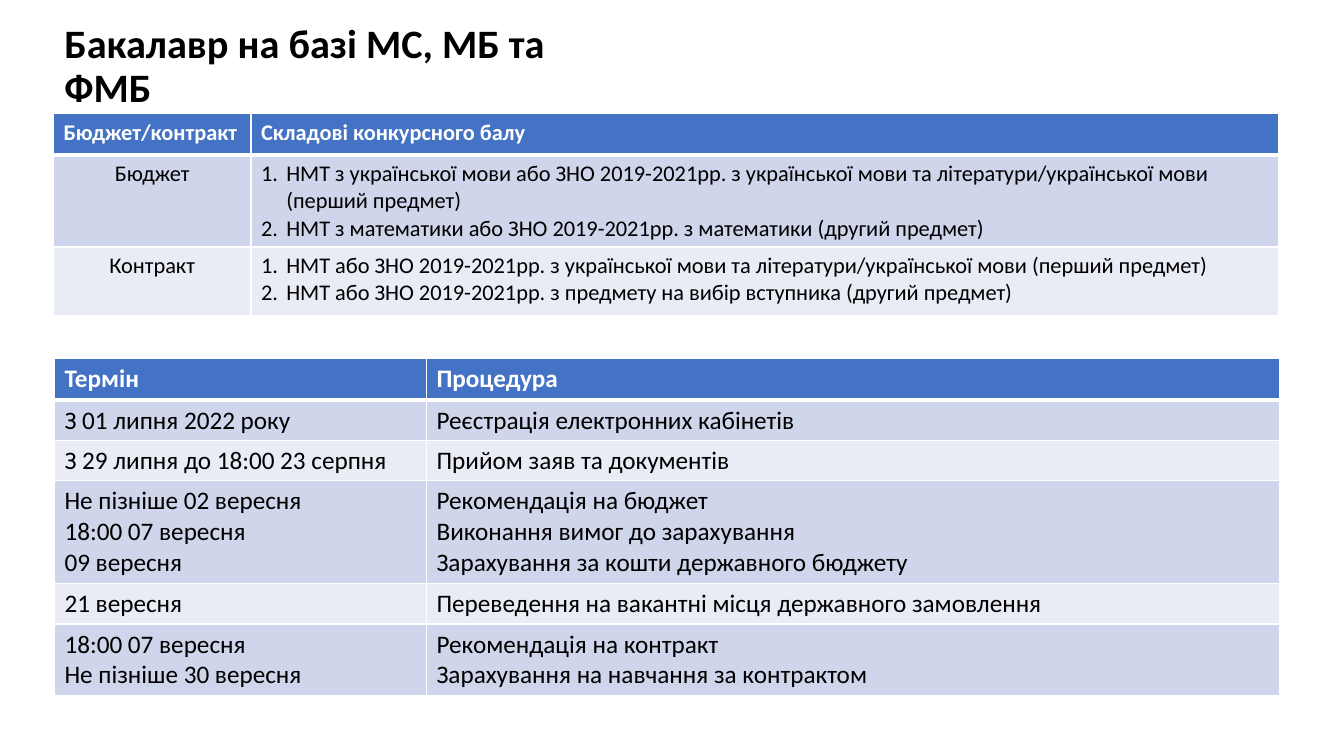
from lxml import etree
from pptx import Presentation
from pptx.dml.color import RGBColor
from pptx.enum.text import MSO_ANCHOR, PP_ALIGN
from pptx.oxml.ns import qn
from pptx.util import Inches, Pt

CENTER = PP_ALIGN.CENTER
LEFT = PP_ALIGN.LEFT
MIDDLE = MSO_ANCHOR.MIDDLE

FONT = "Calibri"
BLACK = RGBColor(0x00, 0x00, 0x00)
WHITE = RGBColor(0xFF, 0xFF, 0xFF)
HEADER_BLUE = RGBColor(0x44, 0x72, 0xC4)
BAND_DARK = RGBColor(0xCF, 0xD5, 0xEA)
BAND_LIGHT = RGBColor(0xE9, 0xEB, 0xF5)

TITLE = "Бакалавр на базі МС, МБ та ФМБ"

# Each cell is a list of paragraphs.
SCORE_ROWS = [
    (["Бюджет/контракт"], ["Складові конкурсного балу"]),
    (["Бюджет"],
     ["НМТ з української мови або ЗНО 2019-2021рр. з української мови та "
      "літератури/української мови (перший предмет)",
      "НМТ з математики або ЗНО 2019-2021рр. з математики (другий предмет)"]),
    (["Контракт"],
     ["НМТ або ЗНО 2019-2021рр. з української мови та "
      "літератури/української мови (перший предмет)",
      "НМТ або ЗНО 2019-2021рр. з предмету на вибір вступника (другий предмет)"]),
]

SCHEDULE_ROWS = [
    (["Термін"], ["Процедура"]),
    (["З 01 липня 2022 року"], ["Реєстрація електронних кабінетів"]),
    (["З 29 липня до 18:00 23 серпня"], ["Прийом заяв та документів"]),
    (["Не пізніше 02 вересня", "18:00 07 вересня", "09 вересня"],
     ["Рекомендація на бюджет", "Виконання вимог до зарахування",
      "Зарахування за кошти державного бюджету"]),
    (["21 вересня"], ["Переведення на вакантні місця державного замовлення"]),
    (["18:00 07 вересня", "Не пізніше 30 вересня"],
     ["Рекомендація на контракт", "Зарахування на навчання за контрактом"]),
]


def set_font(paragraph, size, color, bold):
    font = paragraph.font
    font.name = FONT
    font.size = Pt(size)
    font.bold = bold
    font.color.rgb = color


def number_paragraph(paragraph):
    properties = paragraph._p.get_or_add_pPr()
    properties.set("marL", str(Inches(0.25)))
    properties.set("indent", str(-Inches(0.25)))
    etree.SubElement(properties, qn("a:buAutoNum"), type="arabicPeriod")


def set_borders(cell, row_index):
    """Draw thin white borders, with a thick one below the header row."""
    widths = {"lnL": 1, "lnR": 1,
              "lnT": 3 if row_index == 1 else 1,
              "lnB": 3 if row_index == 0 else 1}
    properties = cell._tc.get_or_add_tcPr()
    for side, width in widths.items():
        line = etree.SubElement(properties, qn(f"a:{side}"), w=str(Pt(width)))
        fill = etree.SubElement(line, qn("a:solidFill"))
        etree.SubElement(fill, qn("a:srgbClr"), val=str(WHITE))


def fill_cell(cell, row_index, lines, size, alignment, numbered):
    is_header = row_index == 0
    set_borders(cell, row_index)
    cell.fill.solid()
    if is_header:
        cell.fill.fore_color.rgb = HEADER_BLUE
    else:
        cell.fill.fore_color.rgb = BAND_DARK if row_index % 2 else BAND_LIGHT
    cell.text = "\n".join(lines)
    for paragraph in cell.text_frame.paragraphs:
        paragraph.alignment = alignment
        if numbered:
            number_paragraph(paragraph)
        set_font(paragraph, size, WHITE if is_header else BLACK, is_header)


def add_banded_table(slide, left, top, widths, heights, rows, size,
                     first_alignment=LEFT, numbered=False):
    """Add a two-column table; numbered applies to its second column's body."""
    table = slide.shapes.add_table(
        len(rows), len(widths), Inches(left), Inches(top),
        Inches(sum(widths)), Inches(sum(heights))).table
    for column, width in zip(table.columns, widths):
        column.width = Inches(width)
    for row_index, (height, row) in enumerate(zip(heights, rows)):
        table.rows[row_index].height = Inches(height)
        for column_index, lines in enumerate(row):
            is_body = row_index > 0
            is_first = column_index == 0
            fill_cell(table.cell(row_index, column_index), row_index, lines, size,
                      first_alignment if is_body and is_first else LEFT,
                      numbered and is_body and not is_first)


def add_title(slide, left, top, width, height):
    box = slide.shapes.add_textbox(
        Inches(left), Inches(top), Inches(width), Inches(height))
    frame = box.text_frame
    frame.word_wrap = True
    frame.vertical_anchor = MIDDLE
    paragraph = frame.paragraphs[0]
    paragraph.text = TITLE
    paragraph.line_spacing = 0.9
    set_font(paragraph, 28.8, BLACK, True)


def main():
    presentation = Presentation()
    presentation.slide_width = Inches(13.33)
    presentation.slide_height = Inches(7.5)
    slide = presentation.slides.add_slide(presentation.slide_layouts[6])
    add_title(slide, 0.54, 0.4, 5.75, 0.54)
    add_banded_table(slide, 0.53, 1.13, [1.96, 10.19], [0.41, 0.91, 0.68],
                     SCORE_ROWS, 16, first_alignment=CENTER, numbered=True)
    add_banded_table(slide, 0.54, 3.56, [3.69, 8.46],
                     [0.41, 0.4, 0.4, 1.02, 0.4, 0.71], SCHEDULE_ROWS, 18)
    presentation.save("out.pptx")


if __name__ == "__main__":
    main()
